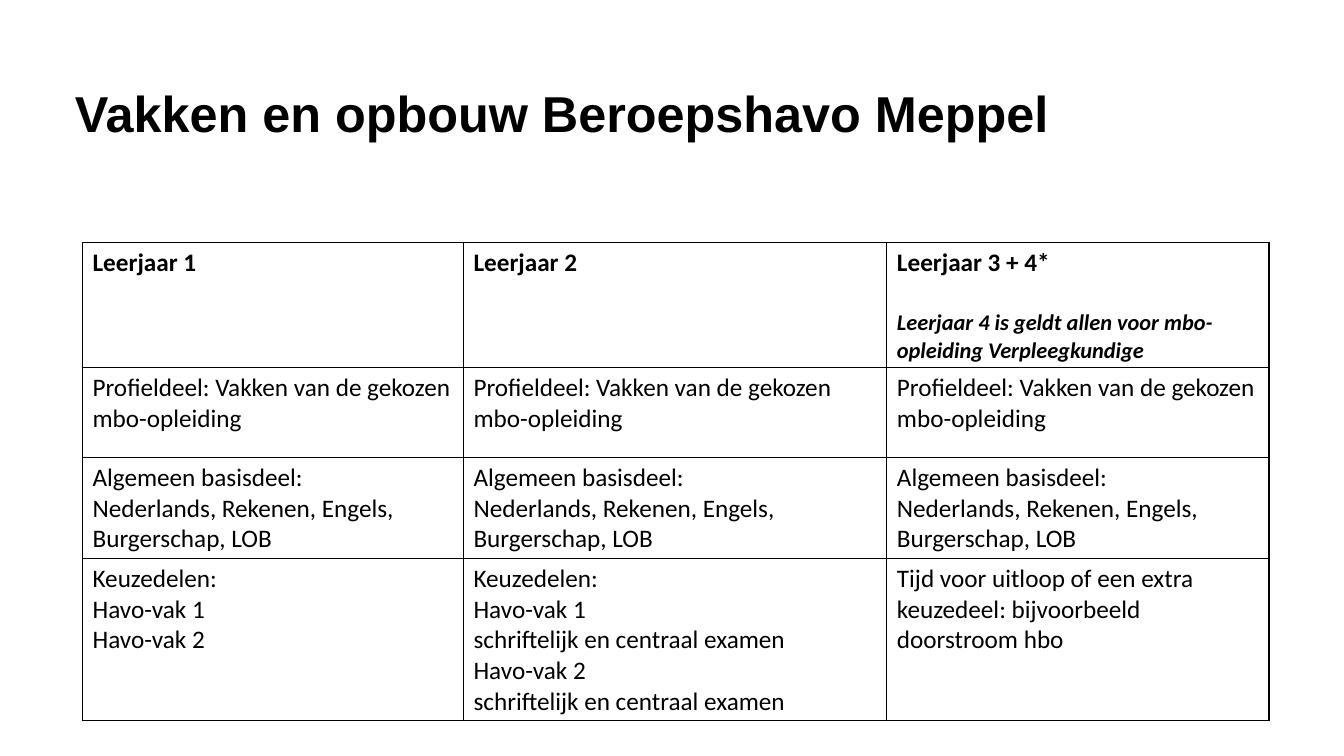
from dataclasses import dataclass

from lxml import etree
from pptx import Presentation
from pptx import util as u
from pptx.dml.color import RGBColor
from pptx.enum import text
from pptx.oxml import ns

COLORS = {"text": "000000", "border": "000000"}
BORDER_WIDTH = u.Pt(1)
COLUMN_WIDTHS = (9.6, 10.67, 9.63)
ROW_HEIGHTS = (3.12, 2.26, 2.52, 4.09)


@dataclass(frozen=True)
class Line:
    """One paragraph of a table cell."""
    wording: str
    size: float = 18
    bold: bool = False
    italic: bool = False
    space_before: float = 0


def lines(*wordings: str) -> list[Line]:
    return [Line(wording) for wording in wordings]


def year(name: str) -> list[Line]:
    return [Line(name, bold=True)]


PROFILE = lines("Profieldeel: Vakken van de gekozen mbo-opleiding")
BASICS = lines("Algemeen basisdeel:", "Nederlands, Rekenen, Engels, Burgerschap, LOB")
EXAM = "schriftelijk en centraal examen"
YEAR_4_NOTE = Line("Leerjaar 4 is geldt allen voor mbo-opleiding Verpleegkundige",
                   size=16, bold=True, italic=True, space_before=22)

ROWS = [
    [year("Leerjaar 1"), year("Leerjaar 2"), year("Leerjaar 3 + 4*") + [YEAR_4_NOTE]],
    [PROFILE] * 3,
    [BASICS] * 3,
    [
        lines("Keuzedelen:", "Havo-vak 1", "Havo-vak 2"),
        lines("Keuzedelen:", "Havo-vak 1", EXAM, "Havo-vak 2", EXAM),
        lines("Tijd voor uitloop of een extra keuzedeel: bijvoorbeeld doorstroom hbo"),
    ],
]


def format_font(font, name: str, size: float, bold: bool, italic: bool = False) -> None:
    font.name = name
    font.size = u.Pt(size)
    font.bold = bold
    font.italic = italic
    font.color.rgb = RGBColor.from_string(COLORS["text"])


def add_title(slide, wording: str) -> None:
    title = slide.shapes.title
    title.left, title.top = u.Cm(1.63), u.Cm(1.93)
    title.width, title.height = u.Cm(27.79), u.Cm(1.8)
    frame = title.text_frame
    frame.text = wording
    frame.word_wrap = True
    frame.auto_size = text.MSO_AUTO_SIZE.SHAPE_TO_FIT_TEXT
    frame.vertical_anchor = text.MSO_ANCHOR.MIDDLE
    paragraph = frame.paragraphs[0]
    paragraph.alignment = text.PP_ALIGN.LEFT
    format_font(paragraph.font, "Arial", 36, bold=True)


def add_borders(cell) -> None:
    properties = cell._tc.get_or_add_tcPr()
    for side in ("a:lnL", "a:lnR", "a:lnT", "a:lnB"):
        border = etree.SubElement(properties, ns.qn(side), w=str(BORDER_WIDTH))
        fill = etree.SubElement(border, ns.qn("a:solidFill"))
        etree.SubElement(fill, ns.qn("a:srgbClr"), val=COLORS["border"])


def fill_cell(cell, content: list[Line]) -> None:
    add_borders(cell)
    cell.fill.background()
    frame = cell.text_frame
    for index, line in enumerate(content):
        paragraph = frame.add_paragraph() if index else frame.paragraphs[0]
        paragraph.text = line.wording
        if line.space_before:
            paragraph.space_before = u.Pt(line.space_before)
        format_font(paragraph.font, "Calibri", line.size, line.bold, line.italic)


def add_subject_table(slide) -> None:
    table = slide.shapes.add_table(
        len(ROW_HEIGHTS), len(COLUMN_WIDTHS), u.Cm(2.08), u.Cm(6.12),
        u.Cm(sum(COLUMN_WIDTHS)), u.Cm(sum(ROW_HEIGHTS))).table
    table.first_row = False
    table.horz_banding = False
    for column, width in zip(table.columns, COLUMN_WIDTHS):
        column.width = u.Cm(width)
    for row, height, contents in zip(table.rows, ROW_HEIGHTS, ROWS):
        row.height = u.Cm(height)
        for cell, content in zip(row.cells, contents):
            fill_cell(cell, content)


def main() -> None:
    presentation = Presentation()
    presentation.slide_width, presentation.slide_height = u.Cm(33.87), u.Cm(19.05)
    title_only = presentation.slide_layouts[5]
    slide = presentation.slides.add_slide(title_only)

    # Heading
    add_title(slide, "Vakken en opbouw Beroepshavo Meppel")

    # Subjects per school year
    add_subject_table(slide)

    presentation.save("out.pptx")


if __name__ == "__main__":
    main()
